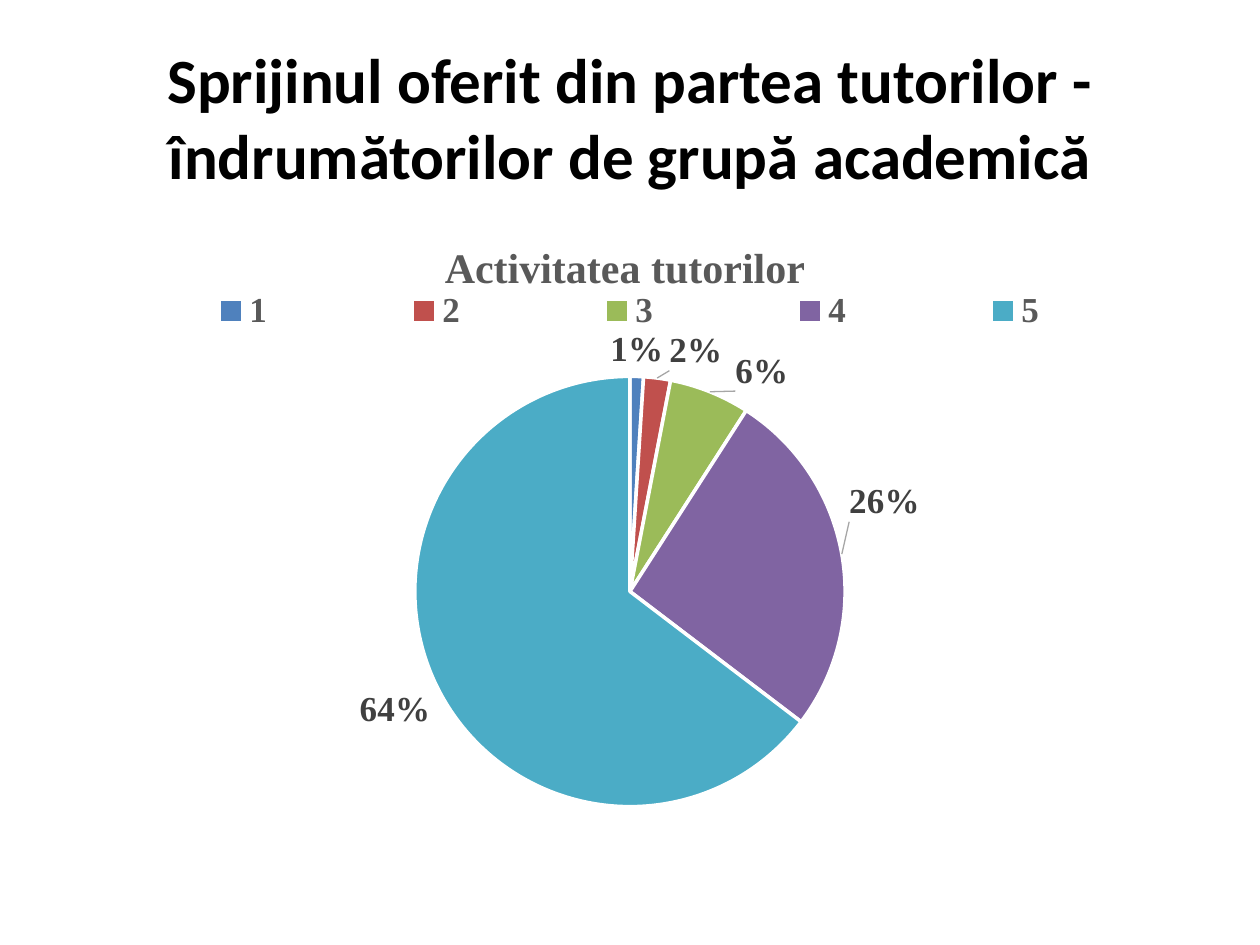
from dataclasses import dataclass
from typing import NamedTuple

from lxml.etree import Element, SubElement
from pptx import Presentation
from pptx.chart.data import CategoryChartData
from pptx.dml.color import RGBColor
from pptx.enum.chart import XL_CHART_TYPE as ChartType
from pptx.enum.chart import XL_LABEL_POSITION as LabelPosition
from pptx.enum.chart import XL_LEGEND_POSITION as LegendPosition
from pptx.enum.text import MSO_ANCHOR, PP_ALIGN
from pptx.oxml.ns import qn
from pptx.util import Inches, Pt


@dataclass(frozen=True)
class Theme:
    title_font: str = "Calibri"
    chart_font: str = "Times New Roman"
    title_size: int = 36
    heading_size: int = 24
    label_size: int = 20
    title_color: str = "000000"
    legend_color: str = "595959"
    label_color: str = "404040"
    leader_color: str = "A6A6A6"
    border_color: str = "FFFFFF"


class Slice(NamedTuple):
    name: str
    value: int
    color: str
    label_shift: tuple[float, float] | None = None  # shares of the chart's size


THEME = Theme()
PERCENT = '0"%"'
CHART_TITLE = "Activitatea tutorilor"
SLICES = [
    Slice("1", 1, "4F81BD"),
    Slice("2", 2, "C0504D", (0.01, 0)),
    Slice("3", 6, "9BBB59", (0.02, 0.01)),
    Slice("4", 26, "8064A2", (0, -0.05)),
    Slice("5", 64, "4BACC6"),
]


def style_font(font, *, name: str, size: int, color: str) -> None:
    font.name, font.size, font.bold = name, Pt(size), True
    font.color.rgb = RGBColor.from_string(color)


def write_text(frame, text: str, **font_format) -> None:
    para = frame.paragraphs[0]
    para.alignment = PP_ALIGN.CENTER
    span = para.add_run()
    span.text = text
    style_font(span.font, **font_format)


def set_layout(parent, index: int, **settings: float | str) -> None:
    """Give a chart part a manual layout, in shares of the chart's size."""
    for old in parent.findall(qn("c:layout")):
        parent.remove(old)
    layout = Element(qn("c:layout"))
    manual = SubElement(layout, qn("c:manualLayout"))
    for tag, value in settings.items():
        SubElement(manual, qn(f"c:{tag}")).set("val", str(value))
    parent.insert(index, layout)


def shift_label(point, shift: tuple[float, float], **font_format) -> None:
    label = point.data_label
    style_font(label.font, **font_format)
    label.position = LabelPosition.OUTSIDE_END
    element = label._dLbl
    set_layout(element, 1, x=shift[0], y=shift[1])
    number = Element(qn("c:numFmt"), formatCode=PERCENT, sourceLinked="0")
    element.insert(2, number)


def color_leader_lines(labels) -> None:
    element = labels._element
    for tag in ("c:showLeaderLines", "c:leaderLines"):
        for old in element.findall(qn(tag)):
            element.remove(old)
    SubElement(element, qn("c:showLeaderLines")).set("val", "1")
    shape = SubElement(SubElement(element, qn("c:leaderLines")), qn("c:spPr"))
    line = SubElement(shape, qn("a:ln"), w=str(Pt(0.75)))
    fill = SubElement(line, qn("a:solidFill"))
    SubElement(fill, qn("a:srgbClr"), val=THEME.leader_color)


def add_pie(page, deck, slices: list[Slice]) -> None:
    data = CategoryChartData()
    data.categories = [part.name for part in slices]
    data.add_series(CHART_TITLE, [part.value for part in slices])
    width, height = deck.slide_width, deck.slide_height
    chart = page.shapes.add_chart(
        ChartType.PIE, int(width * 0.05), Inches(1.75),
        int(width * 0.9), int(height * 0.66), data).chart
    chart_text = {"name": THEME.chart_font, "size": THEME.label_size}
    label_text = {**chart_text, "color": THEME.label_color}
    style_font(chart.font, **chart_text, color=THEME.title_color)

    chart.has_title = True
    write_text(chart.chart_title.text_frame, CHART_TITLE, name=THEME.chart_font,
               size=THEME.heading_size, color=THEME.legend_color)
    set_layout(chart.chart_title._element, 1,
               xMode="edge", yMode="edge", x=0.33, y=0.02)

    chart.has_legend = True
    chart.legend.position = LegendPosition.TOP
    chart.legend.include_in_layout = False
    style_font(chart.legend.font, **chart_text, color=THEME.legend_color)
    set_layout(chart.legend._element, 1, xMode="edge", yMode="edge",
               x=0.02, y=0.11, w=0.96, h=0.07)

    plot = chart.plots[0]
    plot.vary_by_categories = True
    set_layout(plot._element.getparent(), 0, layoutTarget="inner",
               xMode="edge", yMode="edge", x=0.03, y=0.25, w=0.94, h=0.69)

    series = plot.series[0]
    labels = series.data_labels
    labels.show_value = True
    labels.number_format = PERCENT
    labels.number_format_is_linked = False
    labels.position = LabelPosition.OUTSIDE_END
    style_font(labels.font, **label_text)
    color_leader_lines(labels)
    for index, part in enumerate(slices):
        point = series.points[index]
        point.format.fill.solid()
        point.format.fill.fore_color.rgb = RGBColor.from_string(part.color)
        point.format.line.color.rgb = RGBColor.from_string(THEME.border_color)
        point.format.line.width = Pt(2)
        if part.label_shift:
            shift_label(point, part.label_shift, **label_text)


def add_title(page, deck, text: str) -> None:
    title = page.shapes.title
    title.left, title.top = int(deck.slide_width * 0.05), int(deck.slide_height * 0.04)
    title.width, title.height = int(deck.slide_width * 0.9), Inches(1.25)
    title.text_frame.word_wrap = True
    title.text_frame.vertical_anchor = MSO_ANCHOR.MIDDLE
    write_text(title.text_frame, text, name=THEME.title_font,
               size=THEME.title_size, color=THEME.title_color)


def main() -> None:
    deck = Presentation()
    deck.slide_width, deck.slide_height = Inches(10), Inches(7.5)
    page = deck.slides.add_slide(deck.slide_layouts.get_by_name("Title Only"))
    add_title(page, deck, "Sprijinul oferit din partea tutorilor - "
                          "îndrumătorilor de grupă academică")
    add_pie(page, deck, SLICES)
    deck.save("out.pptx")


if __name__ == "__main__":
    main()
